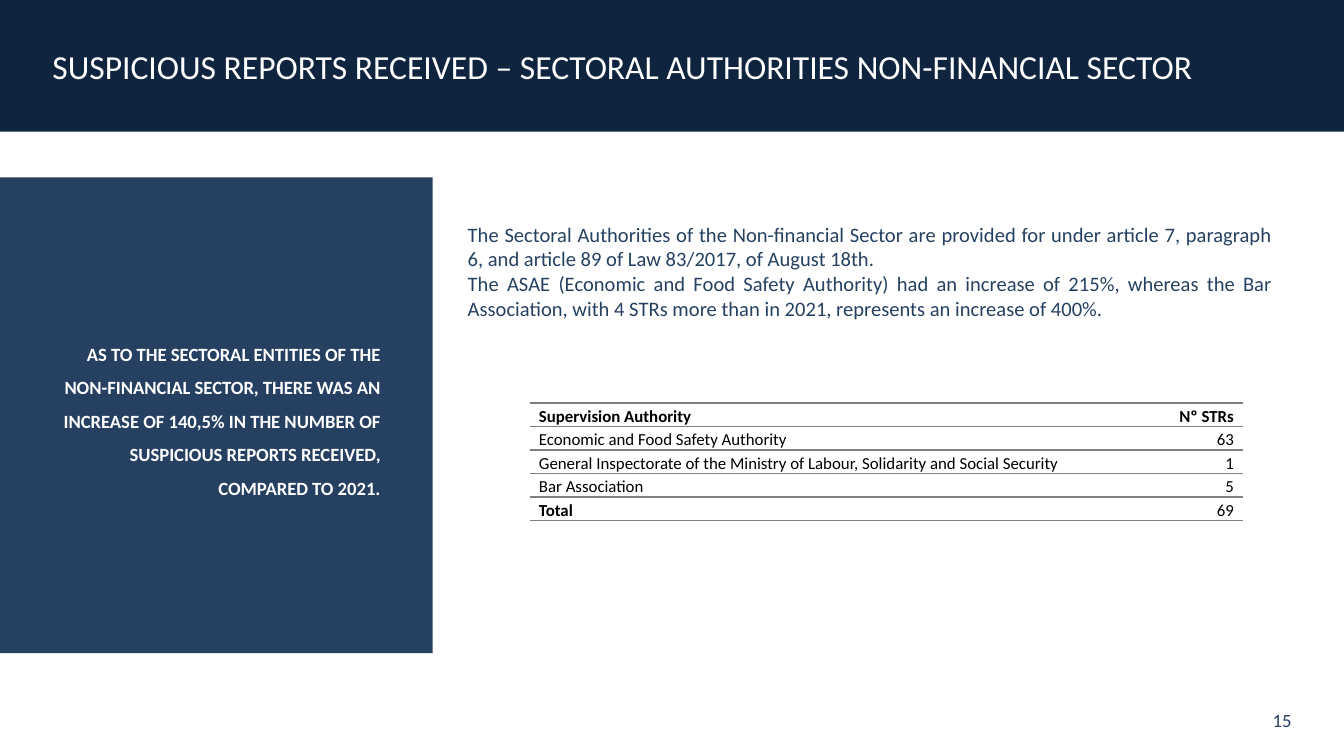
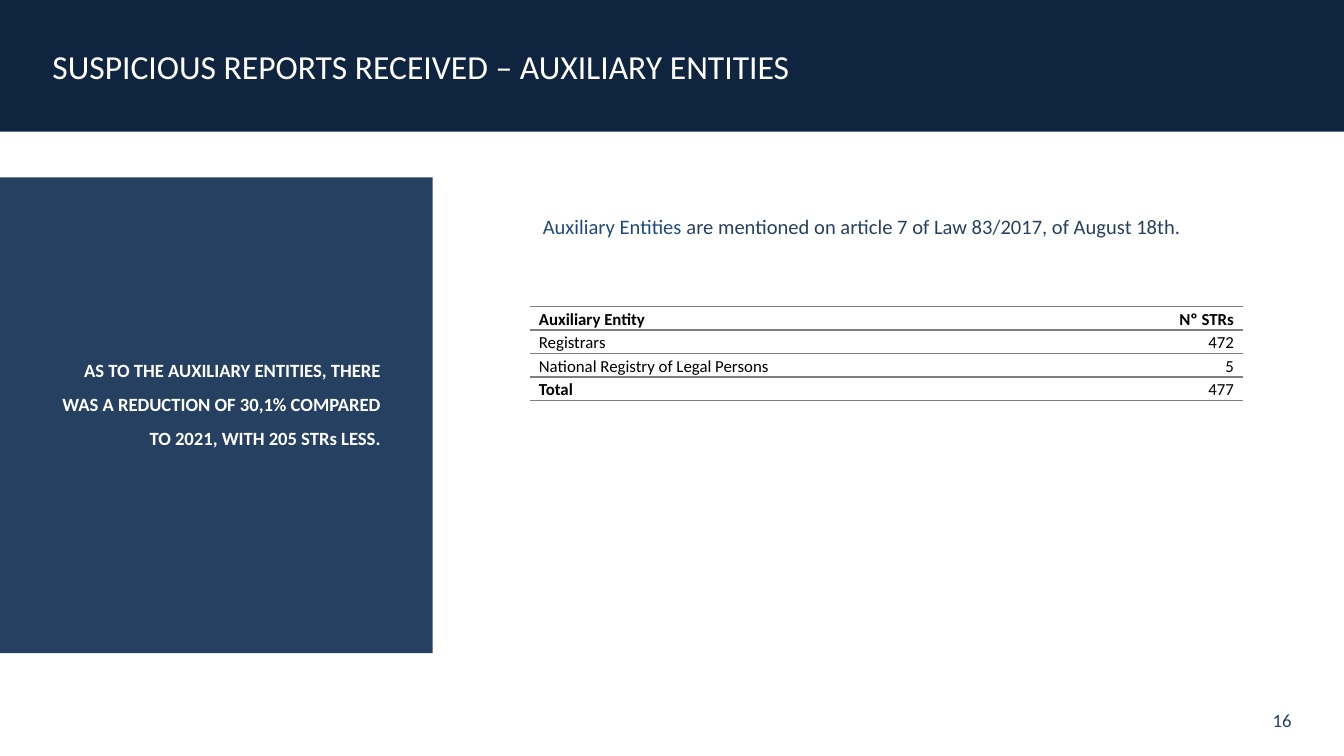
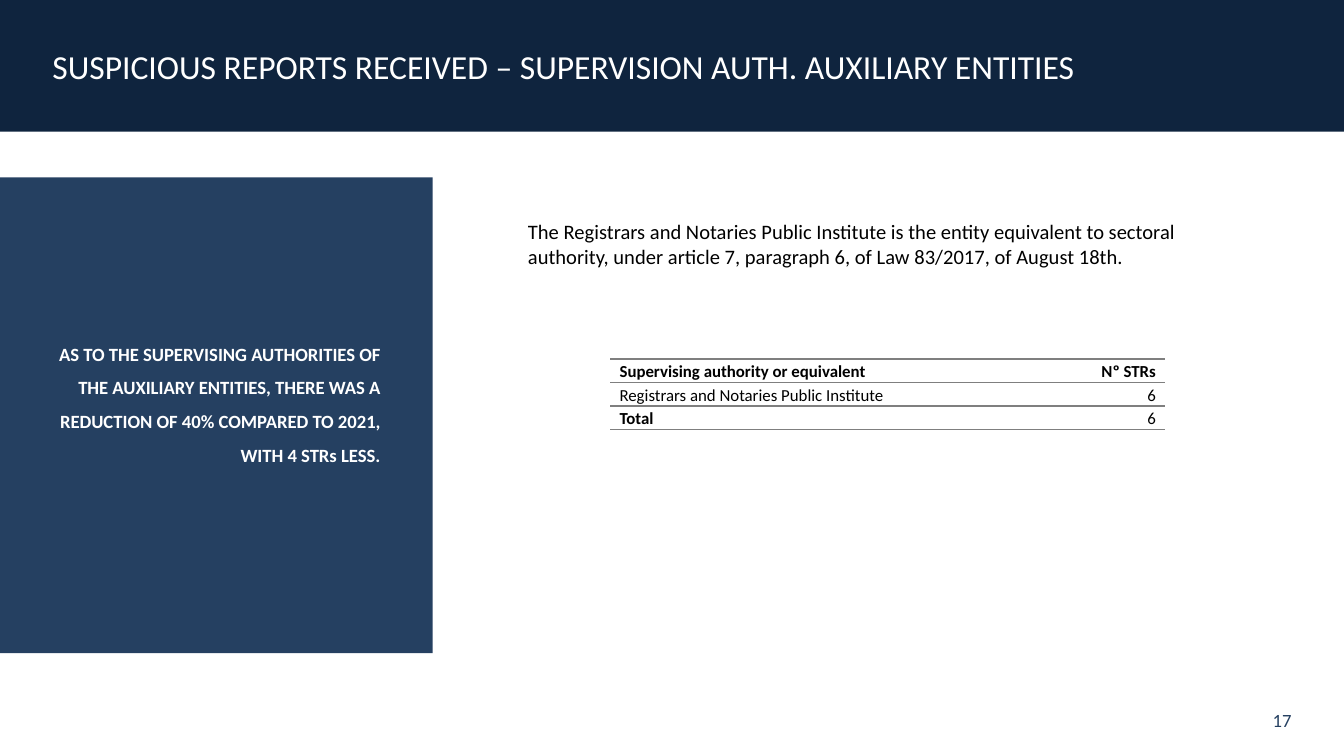
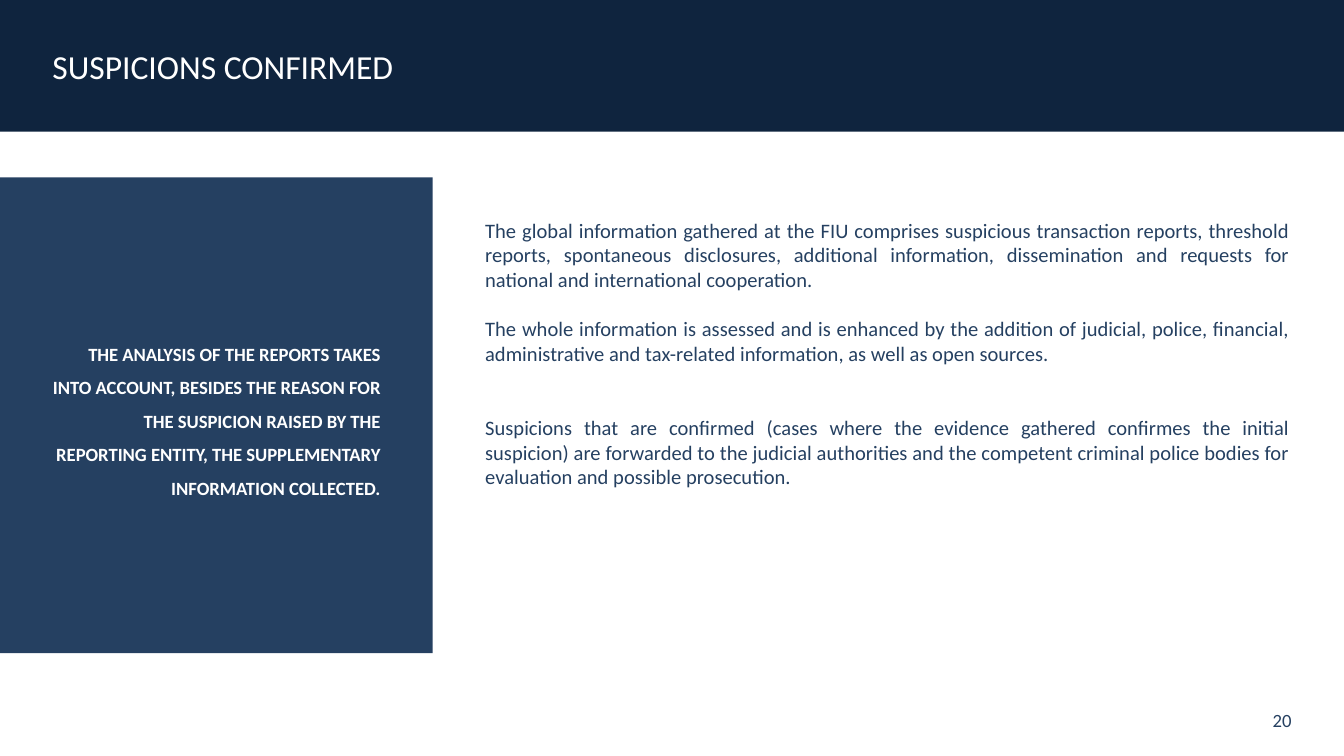
from pptx import Presentation, util as u
from pptx.dml.color import RGBColor
from pptx.enum import shapes, text
from pptx.oxml import parse_xml
from pptx.oxml.ns import nsdecls

NAVY = RGBColor(0x0F, 0x24, 0x3E)
BLUE = RGBColor(0x25, 0x40, 0x61)
LINK = RGBColor(0x1F, 0x49, 0x7D)
WHITE = RGBColor(0xFF, 0xFF, 0xFF)
BLACK = RGBColor(0, 0, 0)
RULE = RGBColor(0x7F, 0x7F, 0x7F)

FONT = "Calibri"
CELL = u.Inches(0.1)
COLS, ROWS = 100, 56.25
WIDE = (3.9, 1, 3.9, 1)
SLIM = (1, 0.5, 1, 0.5)
LEFT, RIGHT = text.PP_ALIGN.LEFT, text.PP_ALIGN.RIGHT
EVEN = text.PP_ALIGN.JUSTIFY
TOP, MID = text.MSO_ANCHOR.TOP, text.MSO_ANCHOR.MIDDLE


def grid(*spans):
    """Turn counts of grid cells into lengths."""
    return [u.Emu(round(span * CELL)) for span in spans]


def write(frame, *paras, size=11, color=BLUE, bold=False, align=LEFT,
          line=None, gaps=()):
    """Fill a frame; a paragraph is a string or a list of (text, color)."""
    for i, item in enumerate(paras):
        para = frame.paragraphs[0] if i == 0 else frame.add_paragraph()
        para.alignment = align
        if line:
            para.line_spacing = line
        if i < len(gaps):
            para.space_before = u.Pt(gaps[i])
        for words, tint in [(item, color)] if isinstance(item, str) else item:
            run = para.add_run()
            run.text = words
            font = run.font
            font.name, font.size, font.bold = FONT, u.Pt(size), bold
            font.color.rgb = tint


def fit(frame, pad, anchor):
    """Set wrapping, insets and anchor of a frame."""
    frame.word_wrap = True
    frame.auto_size = text.MSO_AUTO_SIZE.NONE
    frame.vertical_anchor = anchor
    (frame.margin_left, frame.margin_top,
     frame.margin_right, frame.margin_bottom) = grid(*pad)
    return frame


def band(slide, words):
    """Make the title placeholder the dark band across the top."""
    title = slide.shapes.title
    title.left, title.top, title.width, title.height = grid(0, 0, COLS, 9.8)
    title.fill.solid()
    title.fill.fore_color.rgb = NAVY
    write(fit(title.text_frame, (3.9, 2, 3.9, 2), MID), words,
          size=18, color=WHITE)


def panel(slide, words, lift=0):
    """Draw the side panel, its text raised by half of lift."""
    rect = slide.shapes.add_shape(shapes.MSO_SHAPE.RECTANGLE,
                                  *grid(0, 13.2, 32.2, 35.4))
    rect.shadow.inherit = False
    rect.fill.solid()
    rect.fill.fore_color.rgb = BLUE
    rect.line.fill.background()
    write(fit(rect.text_frame, (3.9, 1, 3.9, 1 + lift), MID), words,
          size=10, color=WHITE, bold=True, align=RIGHT, line=1.5)


def note(slide, at, *paras, pad=SLIM, anchor=TOP, **style):
    """Add a text box."""
    box = slide.shapes.add_textbox(*grid(*at))
    write(fit(box.text_frame, pad, anchor), *paras, **style)


def edge(cell):
    """Rule a cell above and below only."""
    props = cell._tc.get_or_add_tcPr()
    ink = f'<a:solidFill><a:srgbClr val="{RULE}"/></a:solidFill>'
    for side in "LRTB":
        fill = ink if side in "TB" else "<a:noFill/>"
        props.append(parse_xml(
            f'<a:ln{side} {nsdecls("a")} w="12700">{fill}</a:ln{side}>'))
    cell.fill.background()


def counts(slide, left, top, first, rows):
    """Add a table of report counts with a header and a total."""
    rows = [*rows, ("Total", sum(num for _, num in rows[1:]))]
    table = slide.shapes.add_table(
        len(rows), 2, *grid(left, top, first + 5.9, 1.73 * len(rows))).table
    table.first_row = table.horz_banding = False
    table.columns[0].width, table.columns[1].width = grid(first, 5.9)
    for r, row in enumerate(rows):
        for c, value in enumerate(row):
            cell = table.cell(r, c)
            edge(cell)
            (cell.margin_left, cell.margin_top,
             cell.margin_right, cell.margin_bottom) = grid(0.7, 0, 0.7, 0)
            write(cell.text_frame, str(value), size=9, color=BLACK,
                  bold=r == 0 or value == "Total",
                  align=RIGHT if c else LEFT, line=1.15, gaps=[5])


def page(deck, num, title, aside, lift=0):
    """Add a slide with band, panel and page number."""
    slide = deck.slides.add_slide(deck.slide_layouts[5])
    band(slide, title)
    note(slide, (85.9, 52.1, 14.1, 3), str(num), pad=WIDE, anchor=MID,
         size=10, align=RIGHT)
    panel(slide, aside, lift)
    return slide


def main():
    """Build the deck."""
    deck = Presentation()
    deck.slide_width, deck.slide_height = grid(COLS, ROWS)
    lead = "SUSPICIOUS REPORTS RECEIVED – "

    slide = page(
        deck, 15, lead + "SECTORAL AUTHORITIES NON-FINANCIAL SECTOR",
        "AS TO THE SECTORAL ENTITIES OF THE NON-FINANCIAL SECTOR, THERE WAS "
        "AN INCREASE OF 140,5% IN THE NUMBER OF SUSPICIOUS REPORTS RECEIVED, "
        "COMPARED TO 2021.")
    note(slide, (30.9, 15.5, 67.7, 11.2),
         "The Sectoral Authorities of the Non-financial Sector are provided "
         "for under article 7, paragraph 6, and article 89 of Law 83/2017, "
         "of August 18th.",
         "The ASAE (Economic and Food Safety Authority) had an increase of "
         "215%, whereas the Bar Association, with 4 STRs more than in 2021, "
         "represents an increase of 400%.",
         pad=WIDE, align=EVEN)
    counts(slide, 39.4, 30, 47.2, [
        ("Supervision Authority", "Nº STRs"),
        ("Economic and Food Safety Authority", 63),
        ("General Inspectorate of the Ministry of Labour, Solidarity and "
         "Social Security", 1),
        ("Bar Association", 5)])

    slide = page(
        deck, 16, lead + "AUXILIARY ENTITIES",
        "AS TO THE AUXILIARY ENTITIES, THERE WAS A REDUCTION OF 30,1% "
        "COMPARED TO 2021, WITH 205 STRs LESS.", lift=2.5)
    counts(slide, 39.4, 22.8, 47.2, [
        ("Auxiliary Entity", "Nº STRs"),
        ("Registrars", 472),
        ("National Registry of Legal Persons", 5)])
    note(slide, (39.4, 15.4, 53.9, 2.9),
         [("Auxiliary Entities ", LINK),
          ("are mentioned on article 7 of Law 83/2017, of August 18th.",
           BLUE)])

    slide = page(
        deck, 17, lead + "SUPERVISION AUTH. AUXILIARY ENTITIES",
        "AS TO THE SUPERVISING AUTHORITIES OF THE AUXILIARY ENTITIES, THERE "
        "WAS A REDUCTION OF 40% COMPARED TO 2021, WITH 4 STRs LESS.",
        lift=2.5)
    counts(slide, 45.4, 26.7, 35.4, [
        ("Supervising authority or equivalent", "Nº STRs"),
        ("Registrars and Notaries Public Institute", 6)])
    note(slide, (38.3, 15.8, 52, 4.7),
         "The Registrars and Notaries Public Institute is the entity "
         "equivalent to sectoral authority, under article 7, paragraph 6, "
         "of Law 83/2017, of August 18th.", color=BLACK)

    slide = page(
        deck, 20, "SUSPICIONS CONFIRMED",
        "THE ANALYSIS OF THE REPORTS TAKES INTO ACCOUNT, BESIDES THE REASON "
        "FOR THE SUSPICION RAISED BY THE REPORTING ENTITY, THE SUPPLEMENTARY "
        "INFORMATION COLLECTED.")
    note(slide, (32.2, 15.2, 67.7, 22.4),
         "The global information gathered at the FIU comprises suspicious "
         "transaction reports, threshold reports, spontaneous disclosures, "
         "additional information, dissemination and requests for national "
         "and international cooperation.",
         "The whole information is assessed and is enhanced by the addition "
         "of judicial, police, financial, administrative and tax-related "
         "information, as well as open sources.",
         "Suspicions that are confirmed (cases where the evidence gathered "
         "confirmes the initial suspicion) are forwarded to the judicial "
         "authorities and the competent criminal police bodies for "
         "evaluation and possible prosecution.",
         pad=WIDE, align=EVEN, gaps=(0, 13.2, 26.4))

    deck.save("out.pptx")


if __name__ == "__main__":
    main()
